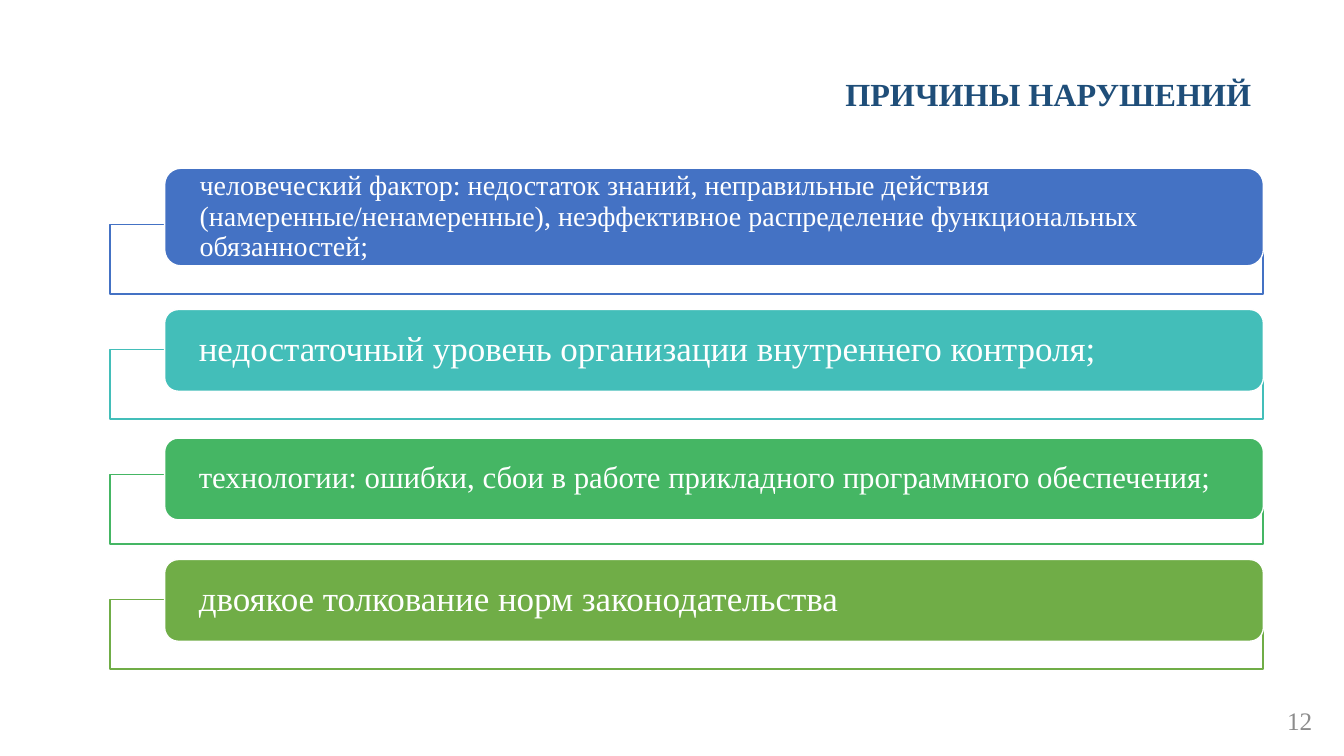
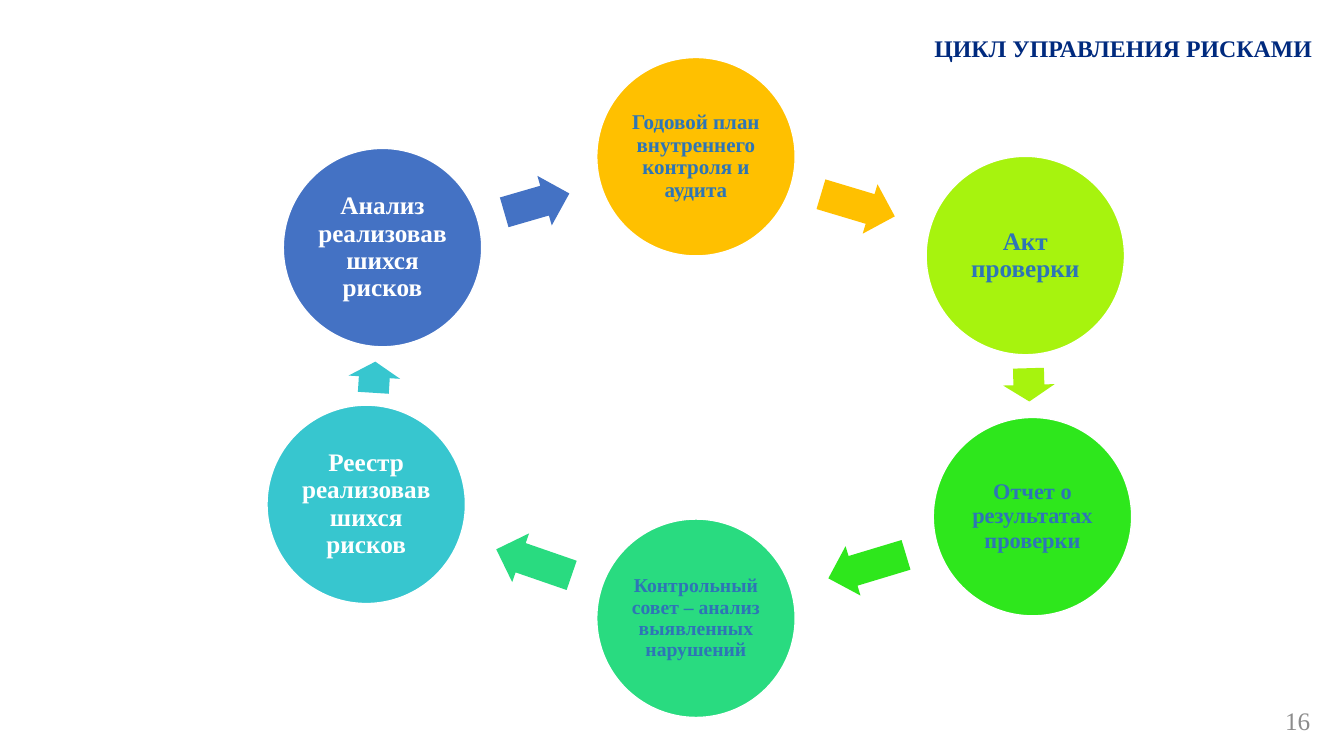
import math
from dataclasses import dataclass
from itertools import pairwise

from pptx import Presentation
from pptx.dml.color import RGBColor
from pptx.enum.shapes import MSO_SHAPE
from pptx.enum.text import MSO_ANCHOR, PP_ALIGN
from pptx.util import Cm, Pt

RECT, ROUNDED = MSO_SHAPE.RECTANGLE, MSO_SHAPE.ROUNDED_RECTANGLE
OVAL, ARROW = MSO_SHAPE.OVAL, MSO_SHAPE.RIGHT_ARROW
MIDDLE, TOP = MSO_ANCHOR.MIDDLE, MSO_ANCHOR.TOP
LEFT, CENTER, RIGHT = PP_ALIGN.LEFT, PP_ALIGN.CENTER, PP_ALIGN.RIGHT

FONT = "Times New Roman"
WHITE, GREY, BLUE = "FFFFFF", "8C8C8C", "2E75B6"
TITLE_BLUE, TITLE_NAVY = "1F4E79", "002A7E"

FRAME_TOP, FRAME_PITCH = 5.66, 3.15
DIAMETER, ARROW_HEIGHT = 5.0, 1.3
ARROW_SHARE, ARROW_SHIFT = 0.53, 0.02


@dataclass
class Cause:
    text: str
    top: float
    height: float
    color: str
    size: float


@dataclass
class Stage:
    text: str
    x: float
    y: float
    color: str
    size: float
    ink: str


CAUSES = [
    Cause("человеческий фактор: недостаток знаний, неправильные действия "
          "(намеренные/ненамеренные), неэффективное распределение "
          "функциональных обязанностей;", 4.24, 2.46, "4472C4", 20),
    Cause("недостаточный уровень организации внутреннего контроля;",
          7.8, 2.06, "43BEB9", 25),
    Cause("технологии: ошибки, сбои в работе прикладного программного "
          "обеспечения;", 11.04, 2.06, "45B664", 22),
    Cause("двоякое толкование норм законодательства",
          14.1, 2.06, "70AD47", 25),
]

STAGES = [
    Stage("Годовой план внутреннего контроля и аудита",
          17.54, 3.95, "FFC000", 15, BLUE),
    Stage("Акт проверки", 25.84, 6.44, "A7F30E", 18, BLUE),
    Stage("Отчет о результатах проверки", 26.02, 13.02, "2EE71C", 16, BLUE),
    Stage("Контрольный совет – анализ выявленных нарушений",
          17.54, 15.58, "29DB80", 14, BLUE),
    Stage("Реестр реализовавшихся рисков", 9.23, 12.71, "37C6CF", 18, WHITE),
    Stage("Анализ реализовавшихся рисков", 9.64, 6.24, "4472C4", 18, WHITE),
]


def rgb(value: str) -> RGBColor:
    """Turn a hex string into a colour."""
    return RGBColor.from_string(value)


def write(sp, text: str, size: float, color: str, align, *, bold: bool = False,
          anchor=MIDDLE, spacing: float = 1.0,
          inset: tuple[float, float] = (0.25, 0.13)) -> None:
    """Write one styled paragraph into a shape."""
    tf = sp.text_frame
    tf.word_wrap = True
    tf.vertical_anchor = anchor
    tf.margin_left = tf.margin_right = Cm(inset[0])
    tf.margin_top = tf.margin_bottom = Cm(inset[1])
    p = tf.paragraphs[0]
    p.alignment = align
    p.line_spacing = spacing
    r = p.add_run()
    r.text = text
    r.font.name = FONT
    r.font.size = Pt(size)
    r.font.bold = bold
    r.font.color.rgb = rgb(color)


def add_text(s, left: float, top: float, width: float, height: float,
             text: str, size: float, color: str, **style) -> None:
    """Add a right-aligned text box."""
    sp = s.shapes.add_textbox(Cm(left), Cm(top), Cm(width), Cm(height))
    write(sp, text, size, color, RIGHT, **style)


def add_shape(s, kind, left: float, top: float, width: float, height: float,
              fill: str, line: str | None = None):
    """Add a flat filled shape with an optional outline."""
    sp = s.shapes.add_shape(kind, Cm(left), Cm(top), Cm(width), Cm(height))
    sp.shadow.inherit = False
    sp.fill.solid()
    sp.fill.fore_color.rgb = rgb(fill)
    if line:
        sp.line.color.rgb = rgb(line)
        sp.line.width = Pt(1)
    else:
        sp.line.fill.background()
    return sp


def add_slide(prs, number: int, number_right: float):
    """Add a blank slide with its page number."""
    s = prs.slides.add_slide(prs.slide_layouts[6])
    add_text(s, number_right - 1.55, 17.65, 1.55, 1.02, str(number), 18, GREY)
    return s


def add_cause(s, index: int, cause: Cause) -> None:
    """Draw a cause bar over its outlined frame."""
    add_shape(s, RECT, 2.77, FRAME_TOP + index * FRAME_PITCH, 29.06, 1.75,
              WHITE, cause.color)
    sp = add_shape(s, ROUNDED, 4.15, cause.top, 27.69, cause.height,
                   cause.color, WHITE)
    write(sp, cause.text, cause.size, WHITE, LEFT, spacing=0.9,
          inset=(0.76, 0))


def add_stage(s, stage: Stage) -> None:
    """Draw a stage circle around its centre."""
    sp = add_shape(s, OVAL, stage.x - DIAMETER / 2, stage.y - DIAMETER / 2,
                   DIAMETER, DIAMETER, stage.color, WHITE)
    write(sp, stage.text, stage.size, stage.ink, CENTER, bold=True,
          spacing=0.9, inset=(0.06, 0.06))


def add_stage_arrow(s, start: Stage, end: Stage) -> None:
    """Draw a block arrow in the gap between two stages."""
    dx, dy = end.x - start.x, end.y - start.y
    distance = math.hypot(dx, dy)
    gap = distance - DIAMETER
    length = ARROW_SHARE * gap
    place = 0.5 - ARROW_SHIFT * gap / distance
    x, y = start.x + dx * place, start.y + dy * place
    sp = add_shape(s, ARROW, x - length / 2, y - ARROW_HEIGHT / 2,
                   length, ARROW_HEIGHT, start.color)
    sp.adjustments[0] = 0.6
    sp.adjustments[1] = 0.5
    sp.rotation = math.degrees(math.atan2(dy, dx)) % 360


def build_causes(prs) -> None:
    """Build the slide with the causes of violations."""
    s = add_slide(prs, 12, 33.32)
    add_text(s, 12.14, 1.85, 19.66, 1.14, "ПРИЧИНЫ НАРУШЕНИЙ", 23, TITLE_BLUE,
             bold=True, spacing=0.9)
    for index, cause in enumerate(CAUSES):
        add_cause(s, index, cause)


def build_cycle(prs) -> None:
    """Build the slide with the risk management cycle."""
    s = add_slide(prs, 16, 33.27)
    for start, end in pairwise(STAGES + STAGES[:1]):
        add_stage(s, start)
        add_stage_arrow(s, start, end)
    add_text(s, 11.53, 0.74, 21.74, 0.94, "ЦИКЛ УПРАВЛЕНИЯ РИСКАМИ", 17,
             TITLE_NAVY, bold=True, anchor=TOP, inset=(0.2, 0.1))


def main() -> None:
    """Build and save the presentation."""
    prs = Presentation()
    prs.slide_width, prs.slide_height = Cm(33.87), Cm(19.05)
    build_causes(prs)
    build_cycle(prs)
    prs.save("out.pptx")


if __name__ == "__main__":
    main()
